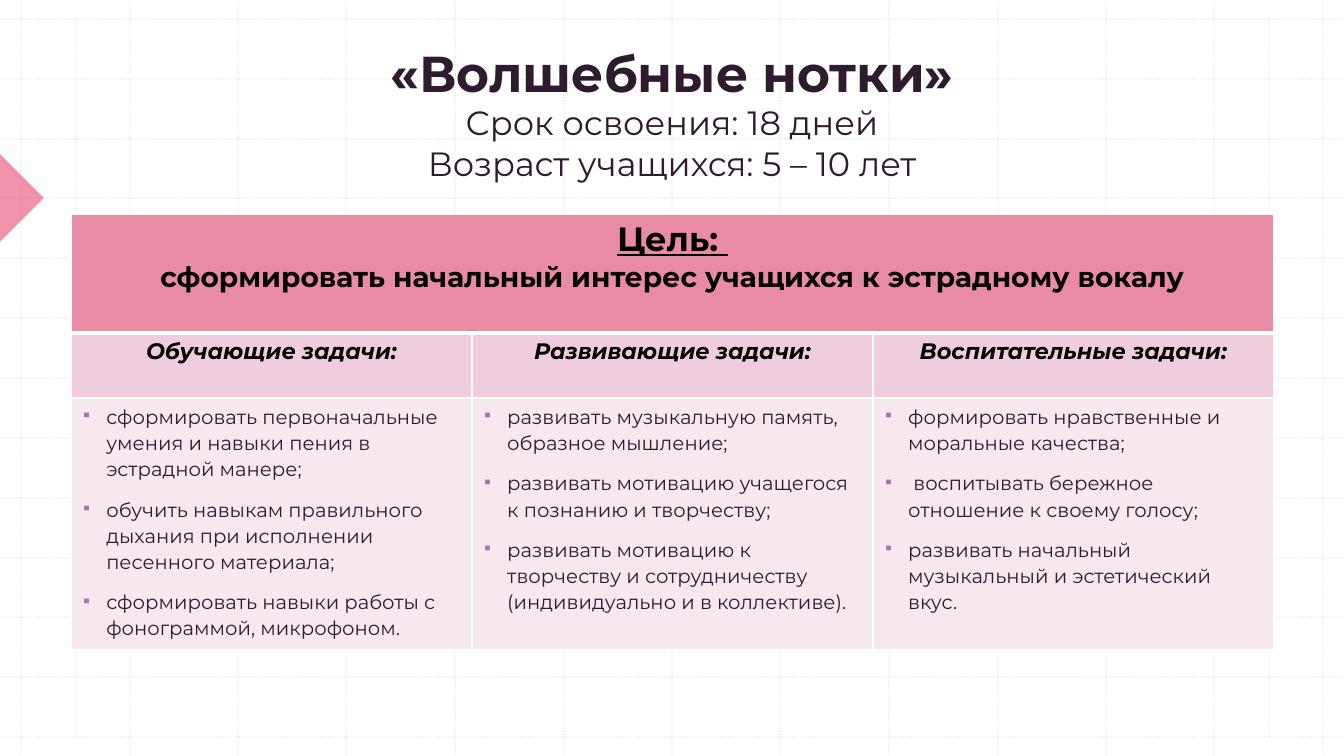
"""Build the programme slide with its goal and task table."""
import dataclasses

import lxml.etree
import pptx
import pptx.dml.color
import pptx.enum.dml
import pptx.enum.shapes
import pptx.enum.text
import pptx.oxml.ns
import pptx.util

PX = 914400 / 100.8
WIDTH, HEIGHT = 1344, 756
GRID_LEFT, GRID_TOP, GRID_RIGHT, GRID_BOTTOM = 21, 19, 1323, 737
GRID_STEPS = 12
MARGIN_LINES = (76, 1269)
ROW_HEIGHTS = (119, 65, 252)
COLUMN_WIDTH = 401

TITLE = "«Волшебные нотки»"
DETAILS = ("Срок освоения: 18 дней", "Возраст учащихся: 5 – 10 лет")
GOAL_LABEL = "Цель: "
GOAL = "сформировать начальный интерес учащихся к эстрадному вокалу"
TASKS = {
    "Обучающие задачи:": (
        "сформировать первоначальные умения и навыки пения в эстрадной манере;",
        "обучить навыкам правильного дыхания при исполнении песенного материала;",
        "сформировать навыки работы с фонограммой, микрофоном.",
    ),
    "Развивающие задачи:": (
        "развивать музыкальную память, образное мышление;",
        "развивать мотивацию учащегося к познанию и творчеству;",
        "развивать мотивацию к творчеству и сотрудничеству (индивидуально и в коллективе).",
    ),
    "Воспитательные задачи:": (
        "формировать нравственные и моральные качества;",
        " воспитывать бережное отношение к своему голосу;",
        "развивать начальный музыкальный и эстетический вкус.",
    ),
}


@dataclasses.dataclass(frozen=True)
class Theme:
    """Colours, font and type sizes of the slide."""
    font: str = "Montserrat"
    ink: str = "2E1B30"
    black: str = "000000"
    white: str = "FFFFFF"
    grid: str = "BCBCBC"
    accent: str = "E7295E"
    bullet: str = "AB74B1"
    goal_fill: str = "EA8BA5"
    heading_fill: str = "EFCCDE"
    task_fill: str = "F7E8EF"
    title_size: int = 36
    detail_size: int = 24
    goal_size: int = 20
    heading_size: int = 16
    task_size: int = 14


THEME = Theme()


def px(value):
    """Turn pixels into EMU."""
    return pptx.util.Emu(round(value * PX))


def rgb(value):
    """Turn a hex string into a colour."""
    return pptx.dml.color.RGBColor.from_string(value)


def add_xml(parent, tag, **attributes):
    """Append a DrawingML element."""
    return lxml.etree.SubElement(parent, pptx.oxml.ns.qn(tag), attributes)


def set_opacity(shape, percent):
    """Apply one opacity to the colours of a shape."""
    for colour in shape._element.spPr.iter(pptx.oxml.ns.qn("a:srgbClr")):
        add_xml(colour, "a:alpha", val=str(percent * 1000))


def format_paragraph(p, size, color, bold=False, italic=False, centred=True):
    """Set the font and alignment of a paragraph."""
    p.font.name = THEME.font
    p.font.size = pptx.util.Pt(size)
    p.font.bold = bold
    p.font.italic = italic
    p.font.color.rgb = rgb(color)
    align = pptx.enum.text.PP_ALIGN
    p.alignment = align.CENTER if centred else align.LEFT


def add_grid_line(s, x1, y1, x2, y2):
    """Draw one faint dotted line."""
    line = s.shapes.add_connector(
        pptx.enum.shapes.MSO_CONNECTOR.STRAIGHT, px(x1), px(y1), px(x2), px(y2))
    line.line.color.rgb = rgb(THEME.grid)
    line.line.width = pptx.util.Pt(1)
    line.line.dash_style = pptx.enum.dml.MSO_LINE.ROUND_DOT
    set_opacity(line, 30)
    add_xml(line._element.spPr, "a:effectLst")


def add_grid(s):
    """Draw the background grid and its two margin lines."""
    for i in range(GRID_STEPS + 1):
        x = round(GRID_LEFT + i * (GRID_RIGHT - GRID_LEFT) / GRID_STEPS)
        y = round(GRID_TOP + i * (GRID_BOTTOM - GRID_TOP) / GRID_STEPS)
        add_grid_line(s, x, 0, x, HEIGHT)
        add_grid_line(s, 0, y, WIDTH, y)
    for x in MARGIN_LINES:
        add_grid_line(s, x, GRID_TOP, x, GRID_BOTTOM)


def add_marker(s):
    """Draw the translucent triangle on the left edge."""
    marker = s.shapes.add_shape(
        pptx.enum.shapes.MSO_SHAPE.RIGHT_TRIANGLE, px(-31), px(167), px(62), px(62))
    marker.rotation = 225
    marker.shadow.inherit = False
    marker.fill.solid()
    marker.fill.fore_color.rgb = rgb(THEME.accent)
    marker.line.fill.background()
    set_opacity(marker, 50)


def style_cell(cell, fill, top=1, bottom=1):
    """Give a cell white borders and a solid fill."""
    tc_pr = cell._tc.get_or_add_tcPr()
    for side, width in (("L", 1), ("R", 1), ("T", top), ("B", bottom)):
        border = add_xml(tc_pr, f"a:ln{side}", w=str(pptx.util.Pt(width)))
        add_xml(add_xml(border, "a:solidFill"), "a:srgbClr", val=THEME.white)
    cell.fill.solid()
    cell.fill.fore_color.rgb = rgb(fill)


def fill_goal(cell):
    """Write the goal."""
    tf = cell.text_frame
    p = tf.paragraphs[0]
    p.text = GOAL_LABEL
    format_paragraph(p, THEME.detail_size, THEME.black, bold=True)
    p.font.underline = True
    p = tf.add_paragraph()
    p.text = GOAL
    format_paragraph(p, THEME.goal_size, THEME.black, bold=True)


def fill_tasks(cell, tasks):
    """Write a bulleted list of tasks."""
    tf = cell.text_frame
    for i, task in enumerate(tasks):
        p = tf.add_paragraph() if i else tf.paragraphs[0]
        p.text = task
        p.line_spacing = 1.1
        p.space_before = pptx.util.Pt(10)
        p_pr = p._p.get_or_add_pPr()
        indent = pptx.util.Inches(0.25)
        p_pr.set("marL", str(indent))
        p_pr.set("indent", str(-indent))
        add_xml(add_xml(p_pr, "a:buClr"), "a:srgbClr", val=THEME.bullet)
        add_xml(p_pr, "a:buSzPct", val="75000")
        add_xml(p_pr, "a:buChar", char="▪")
        format_paragraph(p, THEME.task_size, THEME.ink, centred=False)


def add_task_table(s):
    """Build the table of the goal and three groups of tasks."""
    table = s.shapes.add_table(
        len(ROW_HEIGHTS), len(TASKS), px(71), px(214),
        px(COLUMN_WIDTH * len(TASKS)), px(sum(ROW_HEIGHTS))).table
    table.first_row = table.horz_banding = False
    for row, height in zip(table.rows, ROW_HEIGHTS):
        row.height = px(height)
    for column, (heading, tasks) in enumerate(TASKS.items()):
        table.columns[column].width = px(COLUMN_WIDTH)
        goal_cell, heading_cell, task_cell = (
            table.cell(row, column) for row in range(len(ROW_HEIGHTS)))
        style_cell(goal_cell, THEME.goal_fill, bottom=3)
        style_cell(heading_cell, THEME.heading_fill, top=3)
        style_cell(task_cell, THEME.task_fill)
        p = heading_cell.text_frame.paragraphs[0]
        p.text = heading
        format_paragraph(p, THEME.heading_size, THEME.black, bold=True, italic=True)
        fill_tasks(task_cell, tasks)
    table.cell(0, 0).merge(table.cell(0, len(TASKS) - 1))
    fill_goal(table.cell(0, 0))


def set_title(s):
    """Write the title and bring it to the front."""
    title = s.shapes.title
    title.left, title.top, title.width, title.height = map(px, (103, -15, 1138, 276))
    tf = title.text_frame
    tf.auto_size = pptx.enum.text.MSO_AUTO_SIZE.NONE
    tf.vertical_anchor = pptx.enum.text.MSO_ANCHOR.BOTTOM
    tf.margin_bottom = px(78)
    p = tf.paragraphs[0]
    format_paragraph(p, THEME.detail_size, THEME.ink)
    r = p.add_run()
    r.text = TITLE
    r.font.size = pptx.util.Pt(THEME.title_size)
    r.font.bold = True
    for detail in DETAILS:
        p.add_line_break()
        p.add_run().text = detail
    s.shapes._spTree.append(title._element)


def main():
    """Build and save the slide."""
    prs = pptx.Presentation()
    prs.slide_width, prs.slide_height = px(WIDTH), px(HEIGHT)
    s = prs.slides.add_slide(prs.slide_layouts[5])
    add_grid(s)
    add_marker(s)
    add_task_table(s)
    set_title(s)
    prs.save("out.pptx")


if __name__ == "__main__":
    main()
